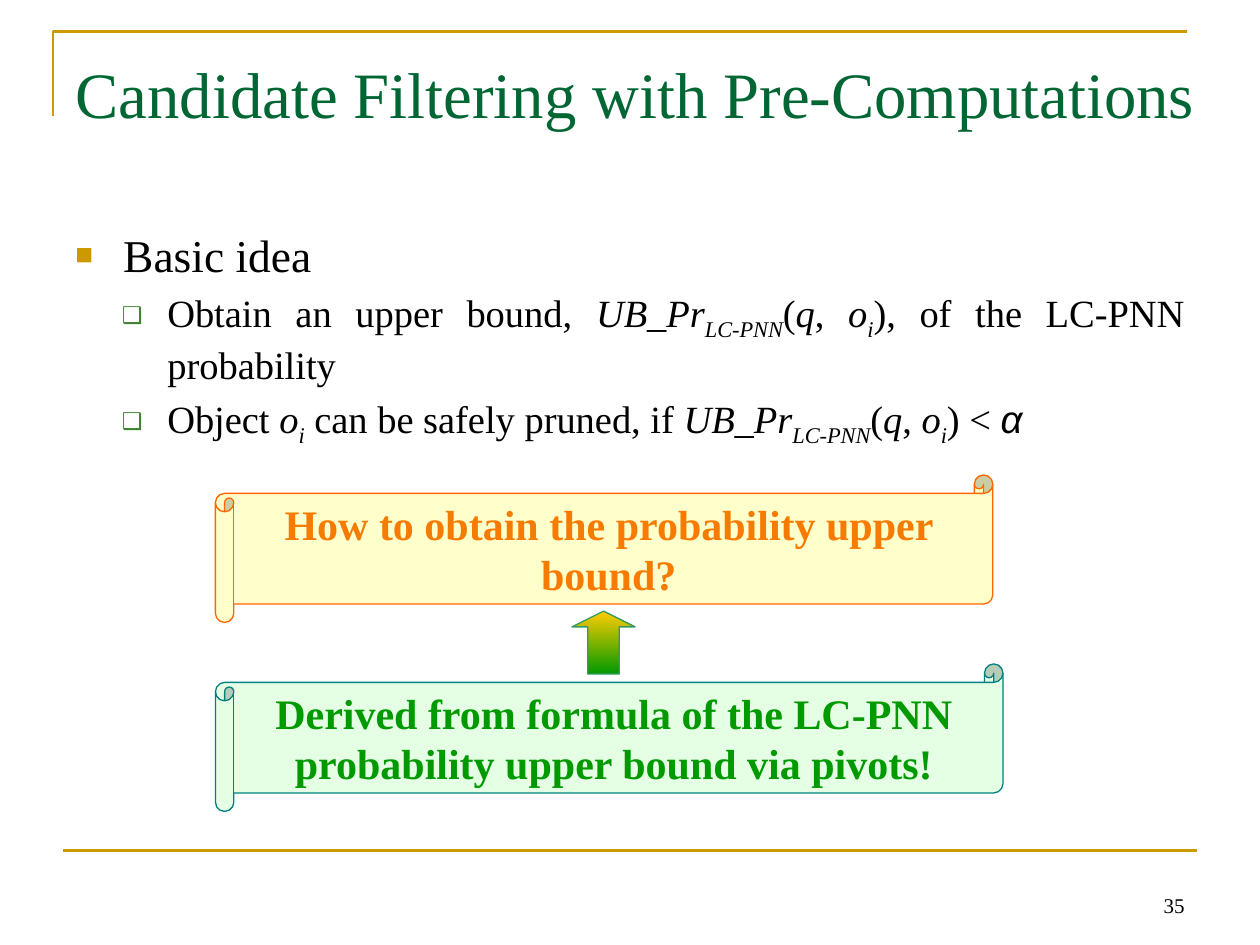
"""Build the slide on candidate filtering with pre-computations."""
import pptx
import pptx.util
import pptx.dml.color
import pptx.enum.shapes
import pptx.enum.text
import pptx.oxml.ns
from lxml import etree

Inches, Pt = pptx.util.Inches, pptx.util.Pt
SHAPES = pptx.enum.shapes.MSO_SHAPE
ALIGN = pptx.enum.text.PP_ALIGN
ANCHOR = pptx.enum.text.MSO_ANCHOR
qn = pptx.oxml.ns.qn

SERIF = "Times New Roman"
COLORS = {
    "gold": "CC9900", "title": "006633", "text": "000000", "sub_bullet": "3B812F",
    "arrow_top": "FFCC00", "arrow_bottom": "009900", "arrow_line": "339966",
}
TITLE = "Candidate Filtering with Pre-Computations"
PAGE_NUMBER = "35"

OBJECT = [("o", "italic"), ("i", "subscript")]
BOUND = [("UB_Pr", "italic"), ("LC-PNN", "subscript"), ("(", "plain"),
         ("q", "italic"), (", ", "plain"), *OBJECT]
BODY = [
    (0, [("Basic idea", "plain")]),
    (1, [("Obtain an upper bound, ", "plain"), *BOUND,
         ("), of the LC-PNN probability", "plain")]),
    (1, [("Object ", "plain"), *OBJECT, (" can be safely pruned, if ", "plain"),
         *BOUND, (") < ", "plain"), ("α", "symbol")]),
]
LEVELS = [
    {"size": 26, "margin": 0.38, "indent": -0.38, "bullet": "■", "color": "gold", "percent": 65},
    {"size": 22, "margin": 0.73, "indent": -0.36, "bullet": "❑", "color": "sub_bullet", "percent": 60},
]
SCROLLS = [
    ("How to obtain the probability upper bound?", 3.77, 6.17, "FFFFCC", "FF6600", "F67B00"),
    ("Derived from formula of the LC-PNN probability upper bound via pivots!",
     5.27, 6.25, "E5FFE5", "008080", "009900"),
]


def rgb(value):
    return pptx.dml.color.RGBColor.from_string(value)


def box(*lengths):
    return [Inches(length) for length in lengths]


def add_run(paragraph, text, size, color, bold=False, style="plain"):
    run = paragraph.add_run()
    run.text = text
    run.font.size = Pt(size)
    run.font.name = "Arial" if style == "symbol" else SERIF
    run.font.color.rgb = rgb(color)
    run.font.bold = bold
    run.font.italic = style != "plain"
    if style == "subscript":
        run.font._element.set("baseline", "-25000")


def set_line(line, color, width):
    line.color.rgb = rgb(color)
    line.width = Pt(width)


def set_bullet(paragraph, level):
    properties = paragraph._p.get_or_add_pPr()
    properties.set("marL", str(Inches(level["margin"])))
    properties.set("indent", str(Inches(level["indent"])))
    color = etree.SubElement(properties, qn("a:buClr"))
    etree.SubElement(color, qn("a:srgbClr"), val=COLORS[level["color"]])
    etree.SubElement(properties, qn("a:buSzPct"), val=str(level["percent"] * 1000))
    etree.SubElement(properties, qn("a:buFont"), typeface="Arial")
    etree.SubElement(properties, qn("a:buChar"), char=level["bullet"])


def add_frame(slide):
    builder = slide.shapes.build_freeform(Inches(0.42), Inches(0.92))
    builder.add_line_segments([box(0.42, 0.25), box(9.42, 0.25)], close=False)
    corner = builder.convert_to_shape()
    corner.shadow.inherit = False
    corner.fill.background()
    set_line(corner.line, COLORS["gold"], 1.5)
    footer = slide.shapes.add_connector(
        pptx.enum.shapes.MSO_CONNECTOR.STRAIGHT, *box(0.5, 6.75, 9.5, 6.75))
    set_line(footer.line, COLORS["gold"], 1.5)
    etree.SubElement(footer._element.spPr, qn("a:effectLst"))


def add_title(slide):
    title = slide.shapes.title
    title.left, title.top, title.width, title.height = box(0.5, 0.38, 9.15, 1.25)
    frame = title.text_frame
    frame.word_wrap = True
    frame.auto_size = pptx.enum.text.MSO_AUTO_SIZE.NONE
    frame.vertical_anchor = ANCHOR.TOP
    frame.paragraphs[0].alignment = ALIGN.LEFT
    add_run(frame.paragraphs[0], TITLE, 37, COLORS["title"])


def add_body(slide):
    frame = slide.shapes.add_textbox(*box(0.5, 1.75, 9, 4.95)).text_frame
    frame.word_wrap = True
    for index, (depth, runs) in enumerate(BODY):
        paragraph = frame.add_paragraph() if index else frame.paragraphs[0]
        level = LEVELS[depth]
        paragraph.level = depth
        paragraph.alignment = ALIGN.JUSTIFY
        paragraph.space_before = Pt(level["size"] * 0.2)
        set_bullet(paragraph, level)
        for text, style in runs:
            add_run(paragraph, text, level["size"], COLORS["text"], style=style)


def add_scroll(slide, text, top, width, fill, line, color):
    scroll = slide.shapes.add_shape(SHAPES.HORIZONTAL_SCROLL, *box(1.71, top, width, 1.17))
    scroll.shadow.inherit = False
    scroll.adjustments[0] = 0.125
    scroll.fill.solid()
    scroll.fill.fore_color.rgb = rgb(fill)
    set_line(scroll.line, line, 0.75)
    frame = scroll.text_frame
    frame.word_wrap = True
    frame.vertical_anchor = ANCHOR.MIDDLE
    frame.paragraphs[0].alignment = ALIGN.CENTER
    add_run(frame.paragraphs[0], text, 24, color, bold=True)


def add_arrow(slide):
    arrow = slide.shapes.add_shape(SHAPES.DOWN_ARROW, *box(4.54, 4.85, 0.5, 0.5))
    arrow.shadow.inherit = False
    arrow.rotation = 180
    arrow.adjustments[0], arrow.adjustments[1] = 0.5, 0.25
    arrow.fill.gradient()
    arrow.fill.gradient_angle = 90
    for stop, position, name in zip(arrow.fill.gradient_stops, (0, 1), ("arrow_top", "arrow_bottom")):
        stop.position = position
        stop.color.rgb = rgb(COLORS[name])
    set_line(arrow.line, COLORS["arrow_line"], 0.75)


def add_page_number(slide):
    frame = slide.shapes.add_textbox(*box(7.17, 6.83, 2.33, 0.5)).text_frame
    frame.word_wrap = True
    frame.vertical_anchor = ANCHOR.BOTTOM
    frame.paragraphs[0].alignment = ALIGN.RIGHT
    add_run(frame.paragraphs[0], PAGE_NUMBER, 12, COLORS["text"])


def main():
    presentation = pptx.Presentation()
    presentation.slide_width, presentation.slide_height = box(10, 7.5)
    slide = presentation.slides.add_slide(presentation.slide_layouts[5])
    add_frame(slide)
    add_title(slide)
    add_body(slide)
    for scroll in SCROLLS:
        add_scroll(slide, *scroll)
    add_arrow(slide)
    add_page_number(slide)
    presentation.save("out.pptx")


if __name__ == "__main__":
    main()
